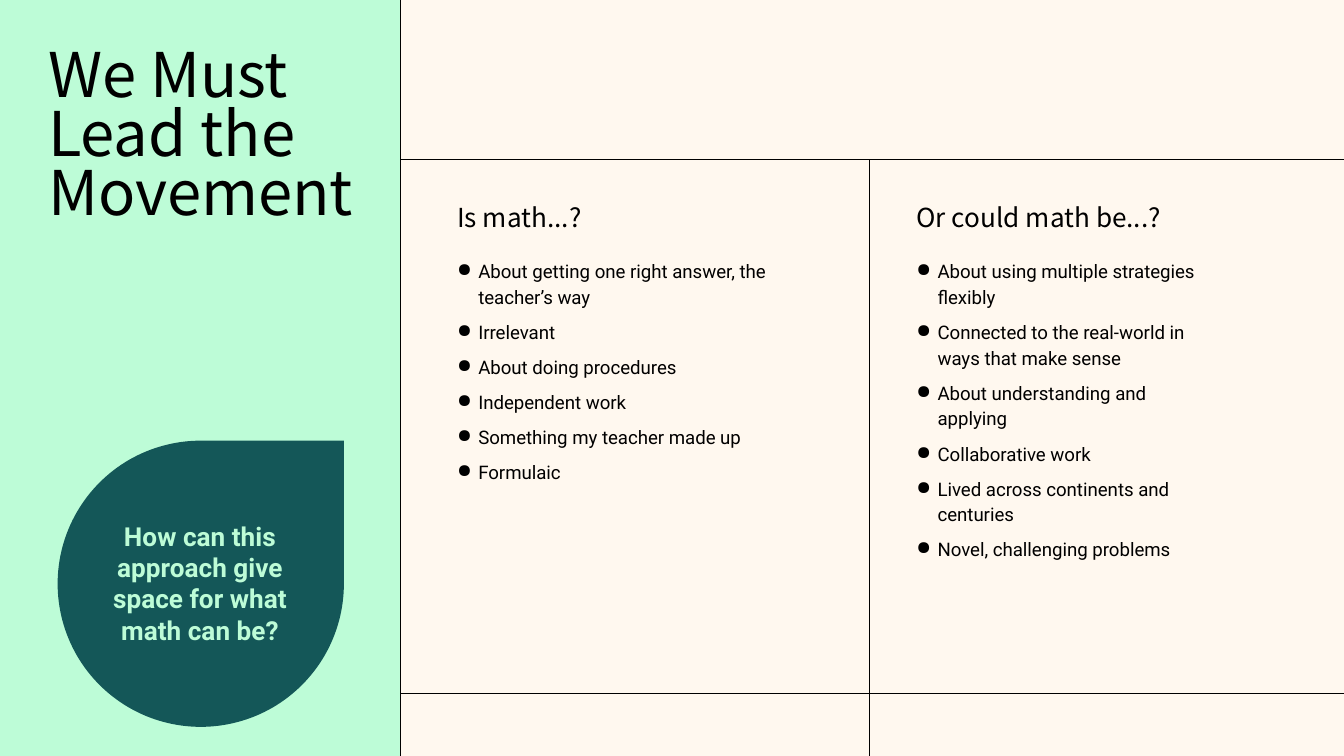
import dataclasses

import lxml.etree
import pptx
import pptx.dml.color
import pptx.enum.shapes
import pptx.enum.text
import pptx.oxml.ns
import pptx.util

Cm = pptx.util.Cm
Pt = pptx.util.Pt
RGB = pptx.dml.color.RGBColor.from_string
qn = pptx.oxml.ns.qn
Align = pptx.enum.text.PP_ALIGN
Shape = pptx.enum.shapes.MSO_SHAPE


@dataclasses.dataclass(frozen=True)
class Theme:
    paper: str = "FFF8EF"
    mint: str = "BDFCD7"
    teal: str = "145758"
    ink: str = "000000"
    display_font: str = "Noto Sans CJK KR"
    body_font: str = "Roboto"
    title_size: int = 33
    heading_size: int = 14
    list_size: int = 10
    rule_width: float = 0.75


@dataclasses.dataclass(frozen=True)
class Box:
    """A region of the page, in centimetres."""
    left: float
    top: float
    width: float
    height: float

    @property
    def right(self):
        return self.left + self.width

    @property
    def bottom(self):
        return self.top + self.height

    def inner(self, left, top, width, height):
        """A box placed relative to this one's top left corner."""
        return Box(self.left + left, self.top + top, width, height)

    def lengths(self):
        return Cm(self.left), Cm(self.top), Cm(self.width), Cm(self.height)


THEME = Theme()
PAGE = Box(0, 0, 25.4, 14.29)
PANEL = Box(0, 0, 7.57, PAGE.height)
GRID_TOP, GRID_MIDDLE, GRID_BOTTOM = 3.02, 16.43, 13.11

IS_MATH = [
    "About getting one right answer, the teacher’s way",
    "Irrelevant",
    "About doing procedures",
    "Independent work",
    "Something my teacher made up",
    "Formulaic",
]
COULD_MATH_BE = [
    "About using multiple strategies flexibly",
    "Connected to the real-world in ways that make sense",
    "About understanding and applying",
    "Collaborative work",
    "Lived across continents and centuries",
    "Novel, challenging problems",
]


def fill_text(shape, text, font, size, color=THEME.ink, bold=False, align=Align.LEFT):
    """Write text into a shape without insets, one paragraph a line."""
    frame = shape.text_frame
    frame.text = text
    frame.word_wrap = True
    frame.auto_size = pptx.enum.text.MSO_AUTO_SIZE.SHAPE_TO_FIT_TEXT
    frame.vertical_anchor = pptx.enum.text.MSO_ANCHOR.TOP
    frame.margin_left = frame.margin_top = frame.margin_right = frame.margin_bottom = 0
    for para in frame.paragraphs:
        para.alignment = align
        for span in para.runs:
            span.font.name = font
            span.font.size = Pt(size)
            span.font.bold = bold
            span.font.color.rgb = RGB(color)
    return frame


def add_text(page, box, text, font, size, **style):
    return fill_text(page.shapes.add_textbox(*box.lengths()), text, font, size, **style)


def add_bullet(para):
    properties = para._p.get_or_add_pPr()
    indent = Cm(0.4)
    properties.set("marL", str(indent))
    properties.set("indent", str(-indent))
    color = lxml.etree.SubElement(properties, qn("a:buClr"))
    lxml.etree.SubElement(color, qn("a:srgbClr"), val=THEME.ink)
    lxml.etree.SubElement(properties, qn("a:buChar"), char="●")


def add_rule(page, start_x, start_y, end_x, end_y):
    rule = page.shapes.add_connector(
        pptx.enum.shapes.MSO_CONNECTOR.STRAIGHT,
        Cm(start_x), Cm(start_y), Cm(end_x), Cm(end_y))
    rule.line.color.rgb = RGB(THEME.ink)
    rule.line.width = Pt(THEME.rule_width)
    lxml.etree.SubElement(rule._element.spPr, qn("a:effectLst"))


def add_filled_shape(page, kind, box, color):
    shape = page.shapes.add_shape(kind, *box.lengths())
    shape.shadow.inherit = False
    shape.fill.solid()
    shape.fill.fore_color.rgb = RGB(color)
    shape.line.fill.background()
    return shape


def add_column(page, box, inset, heading, heading_width, items, list_box_size):
    add_text(page, box.inner(inset, 0.79, heading_width, 0.61), heading,
             THEME.display_font, THEME.heading_size)
    frame = add_text(page, box.inner(inset, 1.83, *list_box_size), "\n".join(items),
                     THEME.body_font, THEME.list_size)
    for para in frame.paragraphs:
        para.line_spacing = 1.15
        para.space_before = Pt(5)
        add_bullet(para)


def add_grid(page, box):
    for height in (GRID_TOP, GRID_BOTTOM):
        add_rule(page, box.left, height, box.right, height)
    add_rule(page, GRID_MIDDLE, GRID_TOP, GRID_MIDDLE, box.bottom)


def add_title_panel(page, box):
    panel = add_filled_shape(page, Shape.RECTANGLE, box, THEME.mint)
    title = page.shapes.title
    panel._element.addnext(title._element)
    title.left, title.top, title.width, title.height = box.inner(0.91, 0.94, 6.02, 3.38).lengths()
    frame = fill_text(title, "We Must Lead the Movement", THEME.display_font, THEME.title_size)
    frame.paragraphs[0].line_spacing = 0.8
    add_rule(page, box.right, box.top, box.right, box.bottom)


def add_question(page, box):
    add_filled_shape(page, Shape.TEAR, box, THEME.teal)
    add_text(page, box.inner(0.76, 1.5, 3.86, 2.39),
             "How can this approach give space for what math can be?",
             THEME.body_font, THEME.heading_size,
             color=THEME.mint, bold=True, align=Align.CENTER)


def main():
    deck = pptx.Presentation()
    deck.slide_width, deck.slide_height = Cm(PAGE.width), Cm(PAGE.height)
    page = deck.slides.add_slide(deck.slide_layouts.get_by_name("Title Only"))
    page.background.fill.solid()
    page.background.fill.fore_color.rgb = RGB(THEME.paper)

    column_height = GRID_BOTTOM - GRID_TOP
    left_column = Box(PANEL.right, GRID_TOP, GRID_MIDDLE - PANEL.right, column_height)
    right_column = Box(GRID_MIDDLE, GRID_TOP, PAGE.right - GRID_MIDDLE, column_height)
    add_column(page, left_column, 1.07, "Is math...?", 6.68, IS_MATH, (5.92, 4.27))
    add_column(page, right_column, 0.89, "Or could math be...?", 5.31, COULD_MATH_BE, (5.31, 5.74))
    add_grid(page, Box(PANEL.right, 0, PAGE.width - PANEL.width, PAGE.height))
    add_title_panel(page, PANEL)
    add_question(page, PANEL.inner(1.09, 8.33, 5.41, 5.41))
    deck.save("out.pptx")


if __name__ == "__main__":
    main()
